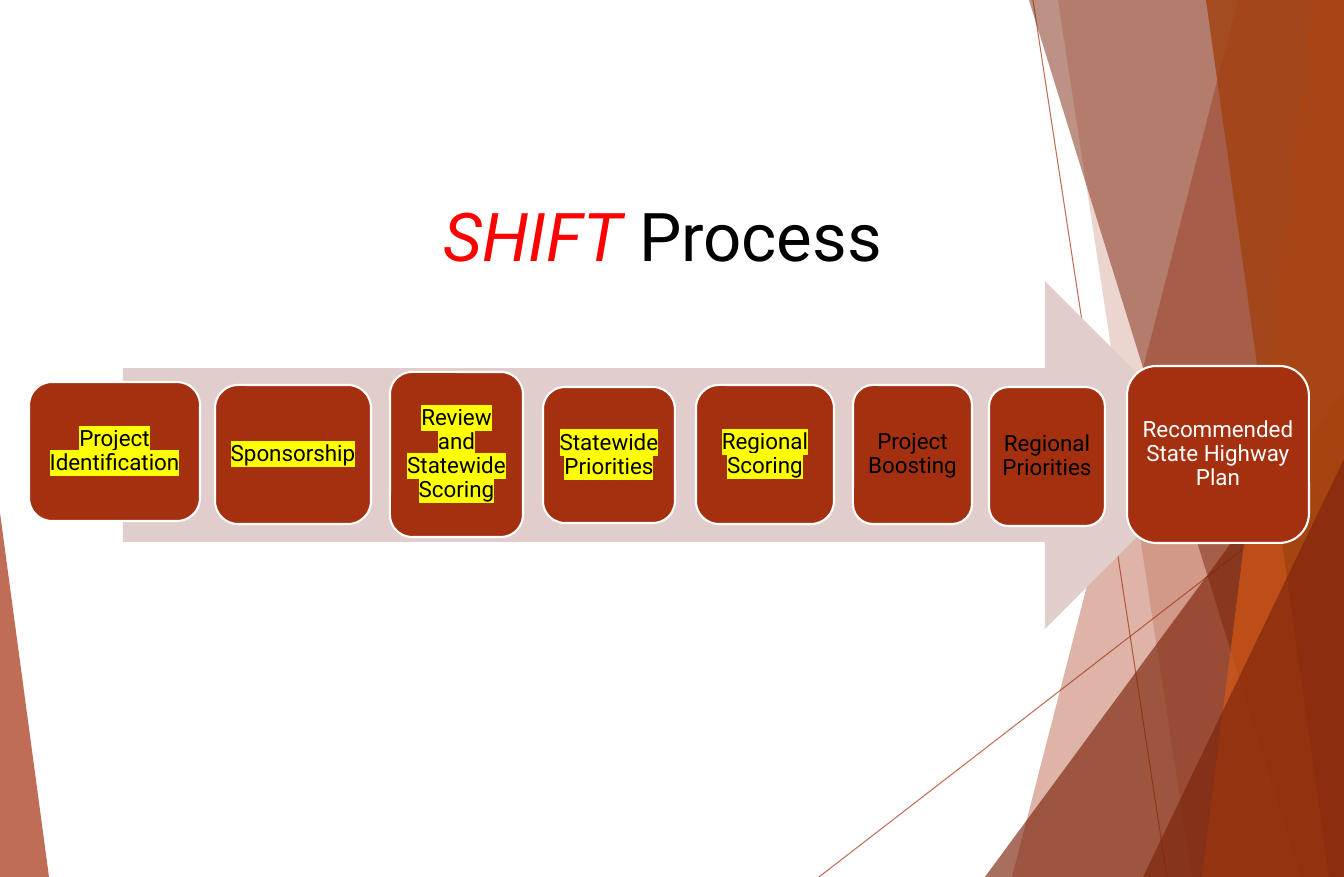
from dataclasses import dataclass

from lxml.etree import SubElement
from pptx import Presentation
from pptx.dml.color import RGBColor
from pptx.enum.shapes import MSO_CONNECTOR, MSO_SHAPE
from pptx.enum.text import MSO_ANCHOR, PP_ALIGN
from pptx.oxml.ns import qn
from pptx.util import Emu, Pt

EMU_PER_PX = 914400 / 100.8
PAGE_WIDTH, PAGE_HEIGHT = 1344, 877


@dataclass(frozen=True)
class Theme:
    font: str = "Roboto"
    title_size: int = 48
    step_size: int = 16
    rust: str = "A5300F"
    maroon: str = "7C240B"
    orange: str = "D55816"
    brown: str = "A04210"
    blush: str = "E1CDCC"
    red: str = "FF0000"
    black: str = "000000"
    white: str = "FFFFFF"
    yellow: str = "FFFF00"


THEME = Theme()

STEPS = [
    ("Project Identification", (29, 382, 171, 139), THEME.black, THEME.yellow),
    ("Sponsorship", (215, 385, 156, 139), THEME.black, THEME.yellow),
    ("Review and Statewide Scoring", (390, 372, 133, 165), THEME.black, THEME.yellow),
    ("Statewide Priorities", (543, 387, 132, 136), THEME.black, THEME.yellow),
    ("Regional Scoring", (696, 385, 138, 139), THEME.black, THEME.yellow),
    ("Project Boosting", (853, 385, 119, 139), THEME.black, None),
    ("Regional Priorities", (989, 387, 116, 139), THEME.black, None),
    ("Recommended State Highway Plan", (1127, 366, 182, 177), THEME.white, None),
]


def px(length):
    return Emu(round(length * EMU_PER_PX))


def paint(fill, color, opacity=100):
    fill.solid()
    fill.fore_color.rgb = RGBColor.from_string(color)
    if opacity < 100:
        color_node = fill._xPr.find(qn("a:solidFill"))[0]
        SubElement(color_node, qn("a:alpha"), val=str(opacity * 1000))


def finish_shape(shape, color, opacity=100, outline=None):
    shape.shadow.inherit = False
    paint(shape.fill, color, opacity)
    if outline:
        paint(shape.line.fill, outline)
        shape.line.width = Pt(1.5)
    else:
        shape.line.fill.background()
    return shape


def add_preset(page, kind, bounds, color, **style):
    shape = page.shapes.add_shape(kind, *map(px, bounds))
    return finish_shape(shape, color, **style)


def add_triangle(page, bounds, apex, color, opacity):
    triangle = add_preset(page, MSO_SHAPE.ISOSCELES_TRIANGLE, bounds, color, opacity=opacity)
    triangle.adjustments[0] = apex


def add_right_band(page, top_left, bottom_left, color, opacity):
    builder = page.shapes.build_freeform(top_left, 0, scale=EMU_PER_PX)
    corners = [(PAGE_WIDTH, 0), (PAGE_WIDTH, PAGE_HEIGHT), (bottom_left, PAGE_HEIGHT)]
    builder.add_line_segments(corners, close=True)
    finish_shape(builder.convert_to_shape(), color, opacity)


def add_thin_line(page, start, end):
    line = page.shapes.add_connector(MSO_CONNECTOR.STRAIGHT, *map(px, start + end))
    paint(line.line.fill, THEME.rust, 70)
    line.line.width = Pt(0.75)
    SubElement(line._element.spPr, qn("a:effectLst"))


def add_span(para, text, *, size, color, italic=False, highlight=None):
    span = para.add_run()
    span.text = text
    span.font.size = Pt(size)
    span.font.italic = italic
    paint(span.font.fill, color)
    if highlight:
        marker = SubElement(span.font._element, qn("a:highlight"))
        SubElement(marker, qn("a:srgbClr"), val=highlight)
    span.font.name = THEME.font


def first_para(box, anchor, align):
    frame = box.text_frame
    frame.word_wrap = True
    frame.vertical_anchor = anchor
    para = frame.paragraphs[0]
    para.alignment = align
    para.line_spacing = 0.9
    return para


def add_backdrop(page):
    add_thin_line(page, (1033, 0), (1167, PAGE_HEIGHT))
    add_thin_line(page, (PAGE_WIDTH, 471), (819, PAGE_HEIGHT))
    add_right_band(page, 1238, 1012, THEME.rust, 36)
    add_right_band(page, 1058, 1192, THEME.rust, 20)
    add_triangle(page, (985, 390, 359, 487), 1, THEME.maroon, 66)
    add_right_band(page, 1029, 1301, THEME.maroon, 50)
    add_right_band(page, 1313, 1202, THEME.orange, 70)
    add_right_band(page, 1206, 1329, THEME.brown, 80)
    add_triangle(page, (1143, 459, 201, 418), 1, THEME.maroon, 66)
    add_triangle(page, (0, 513, 49, 364), 0, THEME.rust, 70)


def add_title(page):
    box = page.shapes.add_textbox(*map(px, (434, 176, 476, 105)))
    para = first_para(box, MSO_ANCHOR.BOTTOM, PP_ALIGN.LEFT)
    add_span(para, "SHIFT", size=THEME.title_size, color=THEME.red, italic=True)
    add_span(para, " Process", size=THEME.title_size, color=THEME.black)


def add_step(page, text, bounds, color, highlight):
    box = add_preset(page, MSO_SHAPE.ROUNDED_RECTANGLE, bounds, THEME.rust, outline=THEME.white)
    frame = box.text_frame
    frame.margin_left = frame.margin_right = px(7)
    frame.margin_top = frame.margin_bottom = px(7)
    para = first_para(box, MSO_ANCHOR.MIDDLE, PP_ALIGN.CENTER)
    add_span(para, text, size=THEME.step_size, color=color, highlight=highlight)


def main():
    deck = Presentation()
    deck.slide_width, deck.slide_height = px(PAGE_WIDTH), px(PAGE_HEIGHT)
    page = deck.slides.add_slide(deck.slide_layouts[6])
    add_backdrop(page)
    add_title(page)
    add_preset(page, MSO_SHAPE.RIGHT_ARROW, (123, 281, 1096, 348), THEME.blush)
    for step in STEPS:
        add_step(page, *step)
    deck.save("out.pptx")


if __name__ == "__main__":
    main()
